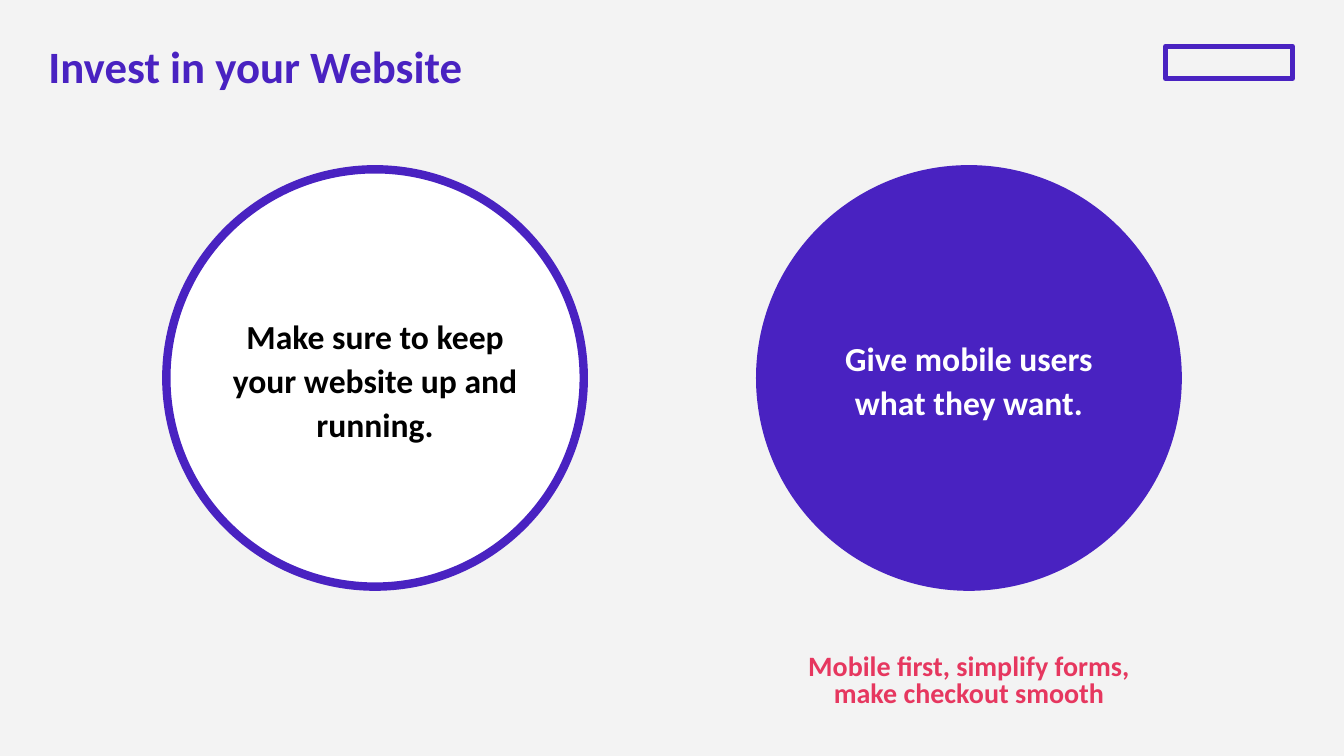
from dataclasses import dataclass

from pptx import Presentation
from pptx.dml.color import RGBColor
from pptx.enum.shapes import MSO_SHAPE
from pptx.enum.text import MSO_ANCHOR, PP_ALIGN
from pptx.util import Inches, Pt


@dataclass(frozen=True)
class Theme:
    font: str = "Calibri"
    background: str = "F3F3F3"
    purple: str = "4922C1"
    pink: str = "E6375F"
    white: str = "FFFFFF"
    black: str = "000000"
    title_size: int = 32
    circle_size: int = 24
    caption_size: int = 20


THEME = Theme()


def rgb(value):
    return RGBColor.from_string(value)


def write(s, text, size, color, spacing, align=PP_ALIGN.LEFT, anchor=MSO_ANCHOR.TOP):
    tf = s.text_frame
    tf.word_wrap = True
    tf.vertical_anchor = anchor
    tf.margin_left = tf.margin_right = tf.margin_top = tf.margin_bottom = 0
    p = tf.paragraphs[0]
    p.alignment = align
    p.line_spacing = spacing
    r = p.add_run()
    r.text = text
    r.font.name = THEME.font
    r.font.size = Pt(size)
    r.font.bold = True
    r.font.color.rgb = rgb(color)


def add_title(slide, box, text):
    sp = slide.shapes.add_textbox(*map(Inches, box))
    write(sp, text, THEME.title_size, THEME.purple, 0.9)


def add_badge(slide, box):
    sp = slide.shapes.add_shape(MSO_SHAPE.RECTANGLE, *map(Inches, box))
    sp.shadow.inherit = False
    sp.fill.background()
    sp.line.color.rgb = rgb(THEME.purple)
    sp.line.width = Pt(3.5)


def add_circle(slide, box, text, fill, color):
    sp = slide.shapes.add_shape(MSO_SHAPE.OVAL, *map(Inches, box))
    sp.shadow.inherit = False
    sp.fill.solid()
    sp.fill.fore_color.rgb = rgb(fill)
    sp.line.color.rgb = rgb(THEME.purple)
    sp.line.width = Pt(6)
    write(sp, text, THEME.circle_size, color, 1.1, PP_ALIGN.CENTER, MSO_ANCHOR.MIDDLE)


def add_caption(slide, box, text):
    sp = slide.shapes.add_textbox(*map(Inches, box))
    write(sp, text, THEME.caption_size, THEME.pink, 0.8, PP_ALIGN.CENTER)


def main():
    prs = Presentation()
    prs.slide_width, prs.slide_height = Inches(13.33), Inches(7.5)
    slide = prs.slides.add_slide(prs.slide_layouts[6])
    slide.background.fill.solid()
    slide.background.fill.fore_color.rgb = rgb(THEME.background)

    # Header
    add_title(slide, (0.48, 0.44, 10.62, 1.06), "Invest in your Website")
    add_badge(slide, (11.56, 0.46, 1.26, 0.32))

    # Two messages side by side
    top, diameter = 1.68, 4.14
    circles = [
        (1.65, "Make sure to keep your website up and running.", THEME.white, THEME.black),
        (7.54, "Give mobile users what they want.", THEME.purple, THEME.white),
    ]
    for left, text, fill, color in circles:
        add_circle(slide, (left, top, diameter, diameter), text, fill, color)

    # Caption below the mobile message
    add_caption(slide, (7.97, 6.5, 3.28, 1),
                "Mobile first, simplify forms, make checkout smooth")

    prs.save("out.pptx")


if __name__ == "__main__":
    main()
